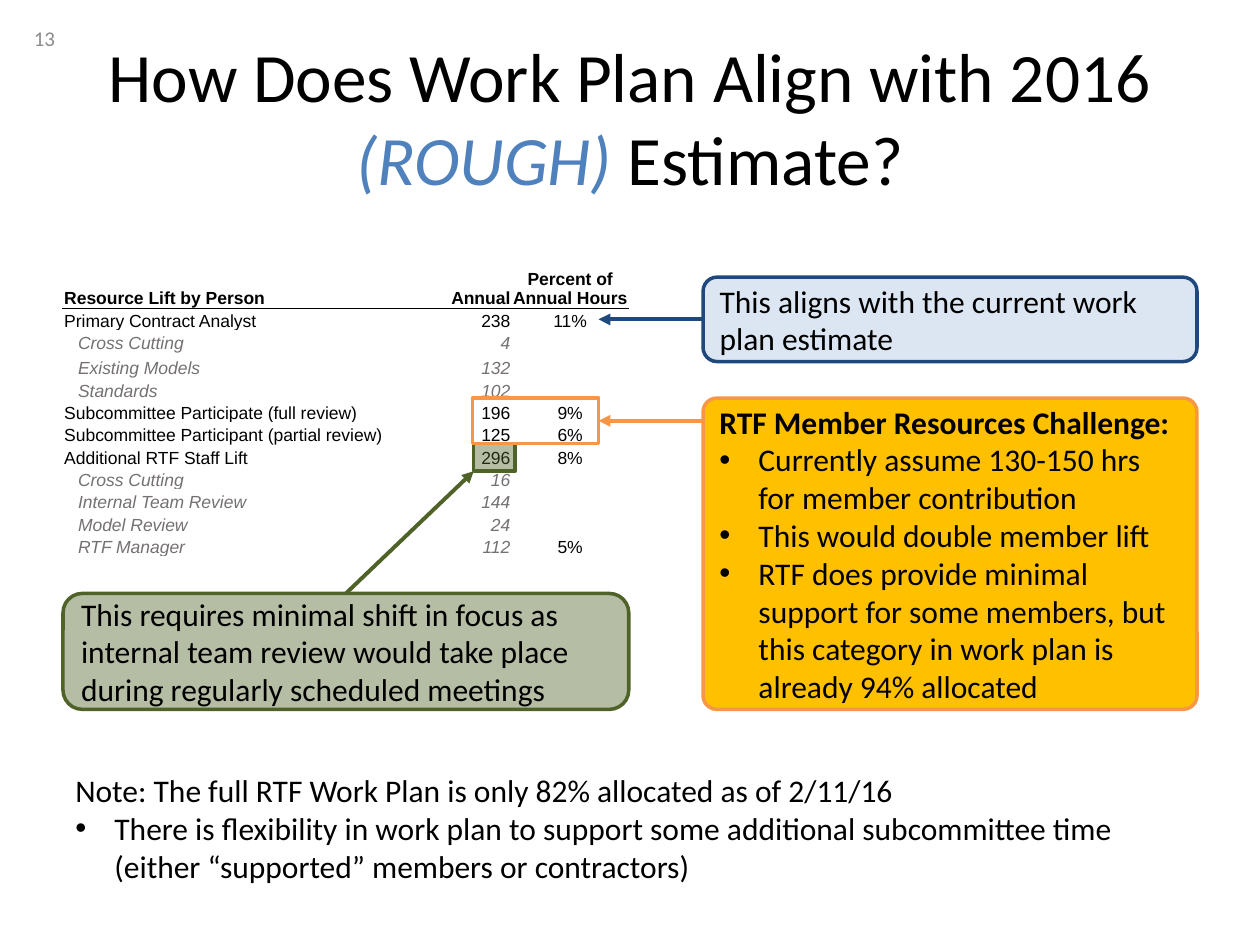
from lxml import etree
from pptx import Presentation
from pptx.dml import color
from pptx.enum import shapes, text
from pptx.oxml import ns
from pptx.util import Inches, Pt

BLACK, GREY, WHITE = "000000", "757171", "FFFFFF"
BLUE, GREEN, ORANGE = "1F497D", "4F6228", "F79646"
LEFT, CENTER, RIGHT = text.PP_ALIGN.LEFT, text.PP_ALIGN.CENTER, text.PP_ALIGN.RIGHT
MIDDLE = text.MSO_ANCHOR.MIDDLE
TOP_SITE, LEFT_SITE, RIGHT_SITE = 0, 1, 3

RESOURCE_ROWS = [  # name, annual hours, percent, is a sub-item
    ("Primary Contract Analyst", "238", "11%", False),
    ("Cross Cutting", "4", "", True),
    ("Existing Models", "132", "", True),
    ("Standards", "102", "", True),
    ("Subcommittee Participate (full review)", "196", "9%", False),
    ("Subcommittee Participant (partial review)", "125", "6%", False),
    ("Additional RTF Staff Lift", "296", "8%", False),
    ("Cross Cutting", "16", "", True),
    ("Internal Team Review", "144", "", True),
    ("Model Review", "24", "", True),
    ("RTF Manager", "112", "5%", True),
]


def rgb(value):
    return color.RGBColor.from_string(value)


def add_child(parent, tag, **attributes):
    return etree.SubElement(parent, ns.qn(tag), attributes)


def box_of(box):
    return [Inches(length) for length in box]


def add_run(paragraph, words, size, hex_color=BLACK, font="Calibri", bold=False, italic=False):
    run = paragraph.add_run()
    run.text = words
    run.font.name, run.font.size = font, Pt(size)
    run.font.bold, run.font.italic = bold, italic
    run.font.color.rgb = rgb(hex_color)


def add_bullet(paragraph):
    properties = paragraph._p.get_or_add_pPr()
    properties.set("marL", str(Inches(0.31)))
    properties.set("indent", str(-Inches(0.31)))
    add_child(properties, "a:buFont", typeface="Arial")
    add_child(properties, "a:buChar", char="•")


def write_body(frame, opening, bullets=(), bold=False):
    """An opening line, then bulleted lines, all at 18 points."""
    frame.word_wrap = True
    paragraph = frame.paragraphs[0]
    paragraph.alignment = LEFT
    add_run(paragraph, opening, 18, bold=bold)
    for words in bullets:
        paragraph = frame.add_paragraph()
        paragraph.alignment = LEFT
        add_bullet(paragraph)
        add_run(paragraph, words, 18)


def add_text_box(slide, box, anchor):
    frame = slide.shapes.add_textbox(*box_of(box)).text_frame
    frame.word_wrap = True
    frame.vertical_anchor = anchor
    return frame


def add_panel(slide, kind, box, line, fill=None, opacity=None):
    shape = slide.shapes.add_shape(kind, *box_of(box))
    shape.shadow.inherit = False
    shape.line.color.rgb = rgb(line)
    shape.line.width = Pt(2)
    shape.text_frame.vertical_anchor = MIDDLE
    if fill:
        shape.fill.solid()
        shape.fill.fore_color.rgb = rgb(fill)
    else:
        shape.fill.background()
    if opacity:
        fill_color = shape._element.spPr.find(ns.qn("a:solidFill"))[0]
        add_child(fill_color, "a:alpha", val=str(opacity * 1000))
    return shape


def add_arrow(slide, start, end, line):
    arrow = slide.shapes.add_connector(
        shapes.MSO_CONNECTOR.STRAIGHT, *box_of(start), *box_of(end))
    arrow.line.color.rgb = rgb(line)
    arrow.line.width = Pt(2.25)
    add_child(arrow.line._get_or_add_ln(), "a:tailEnd", type="triangle")
    add_child(arrow._element.spPr, "a:effectLst")
    return arrow


def add_title(slide, box):
    paragraph = add_text_box(slide, box, MIDDLE).paragraphs[0]
    paragraph.alignment = CENTER
    add_run(paragraph, "How Does Work Plan Align with 2016 ", 39.6)
    add_run(paragraph, "(ROUGH) ", 39.6, "4F81BD", italic=True)
    add_run(paragraph, "Estimate?", 39.6)


def add_page_number(slide, box):
    add_run(add_text_box(slide, box, MIDDLE).paragraphs[0], "13", 12, "8C8C8C")


def fill_cell(cell, words, alignment, indent=0.01, border=None, **style):
    cell.margin_left, cell.margin_right = Inches(indent), Inches(0.01)
    cell.margin_top, cell.margin_bottom = Inches(0.01), 0
    cell.vertical_anchor = text.MSO_ANCHOR.BOTTOM
    if border:
        edge = add_child(cell._tc.get_or_add_tcPr(), border, w=str(Pt(0.5)))
        add_child(add_child(edge, "a:solidFill"), "a:srgbClr", val=BLACK)
    cell.fill.solid()
    cell.fill.fore_color.rgb = rgb(WHITE)
    paragraph = cell.text_frame.paragraphs[0]
    paragraph.alignment = alignment
    if words:
        add_run(paragraph, words, 10, font="Arial", **style)
    else:  # keeps an empty cell from stretching its row
        add_child(paragraph._p, "a:endParaRPr", sz="1000")


def add_resource_table(slide, box):
    table = slide.shapes.add_table(len(RESOURCE_ROWS) + 1, 3, *box_of(box)).table
    table.first_row = table.horz_banding = False
    for column, width in zip(table.columns, (2.7, 0.86, 0.93)):
        column.width = Inches(width)

    # The header and one row are taller; the others share the rest
    taller = {0: 0.53, 3: 0.2}
    shared = (box[3] - sum(taller.values())) / (len(table.rows) - len(taller))
    for index, row in enumerate(table.rows):
        row.height = Inches(taller.get(index, shared))

    alignments = (LEFT, RIGHT, CENTER)
    headings = ("Resource Lift by Person", "Annual", "Percent of Annual Hours")
    for column, heading in enumerate(headings):
        fill_cell(table.cell(0, column), heading, alignments[column], border="a:lnB", bold=True)
    for index, (*values, is_sub_item) in enumerate(RESOURCE_ROWS, 1):
        for column, value in enumerate(values):
            muted = is_sub_item and column < 2
            fill_cell(table.cell(index, column), value, alignments[column],
                      indent=0.12 if is_sub_item and column == 0 else 0.01,
                      border="a:lnT" if index == 1 else None,
                      hex_color=GREY if muted else BLACK, italic=muted)


def add_alignment_callout(slide, box):
    callout = add_panel(slide, shapes.MSO_SHAPE.ROUNDED_RECTANGLE, box, BLUE, "DCE6F2")
    write_body(callout.text_frame, "This aligns with the current work plan estimate")
    middle = box[1] + box[3] / 2
    arrow = add_arrow(slide, (box[0], middle), (4.75, middle), BLUE)
    arrow.begin_connect(callout, LEFT_SITE)


def add_staff_callout(slide, box, mark_box):
    callout = add_panel(slide, shapes.MSO_SHAPE.ROUNDED_RECTANGLE, box, GREEN, GREEN, 42)
    write_body(callout.text_frame, "This requires minimal shift in focus as internal team "
               "review would take place during regularly scheduled meetings")
    add_panel(slide, shapes.MSO_SHAPE.RECTANGLE, mark_box, GREEN, GREEN, 42)
    arrow = add_arrow(slide, (box[0] + box[2] / 2, box[1]),
                      (mark_box[0], mark_box[1] + mark_box[3]), GREEN)
    arrow.begin_connect(callout, TOP_SITE)


def add_member_callout(slide, box, mark_box):
    callout = add_panel(slide, shapes.MSO_SHAPE.ROUNDED_RECTANGLE, box, ORANGE, "FFC000")
    callout.adjustments[0] = 0.044
    write_body(callout.text_frame, "RTF Member Resources Challenge:", (
        "Currently assume 130-150 hrs for member contribution",
        "This would double member lift",
        "RTF does provide minimal support for some members, but this category "
        "in work plan is already 94% allocated"), bold=True)
    mark = add_panel(slide, shapes.MSO_SHAPE.RECTANGLE, mark_box, ORANGE)
    middle = mark_box[1] + mark_box[3] / 2
    arrow = add_arrow(slide, (box[0], middle), (mark_box[0] + mark_box[2], middle), ORANGE)
    arrow.end_connect(mark, RIGHT_SITE)


def add_note(slide, box):
    write_body(add_text_box(slide, box, text.MSO_ANCHOR.TOP),
               "Note: The full RTF Work Plan is only 82% allocated as of 2/11/16",
               ("There is flexibility in work plan to support some additional subcommittee "
                "time (either “supported” members or contractors)",))


def main():
    presentation = Presentation()
    presentation.slide_width, presentation.slide_height = Inches(10), Inches(7.5)
    slide = presentation.slides.add_slide(presentation.slide_layouts[6])
    add_title(slide, (0.5, 0.3, 9, 1.25))
    add_resource_table(slide, (0.5, 1.92, 4.49, 2.5))
    add_page_number(slide, (0.17, 0.1, 2.33, 0.4))
    add_alignment_callout(slide, (5.58, 2.2, 3.92, 0.67))
    add_staff_callout(slide, (0.5, 4.71, 4.49, 0.92), (3.76, 3.52, 0.33, 0.22))
    add_member_callout(slide, (5.58, 3.16, 3.92, 2.47), (3.75, 3.16, 1, 0.36))
    add_note(slide, (0.5, 6.07, 9, 1.01))
    presentation.save("out.pptx")


if __name__ == "__main__":
    main()
